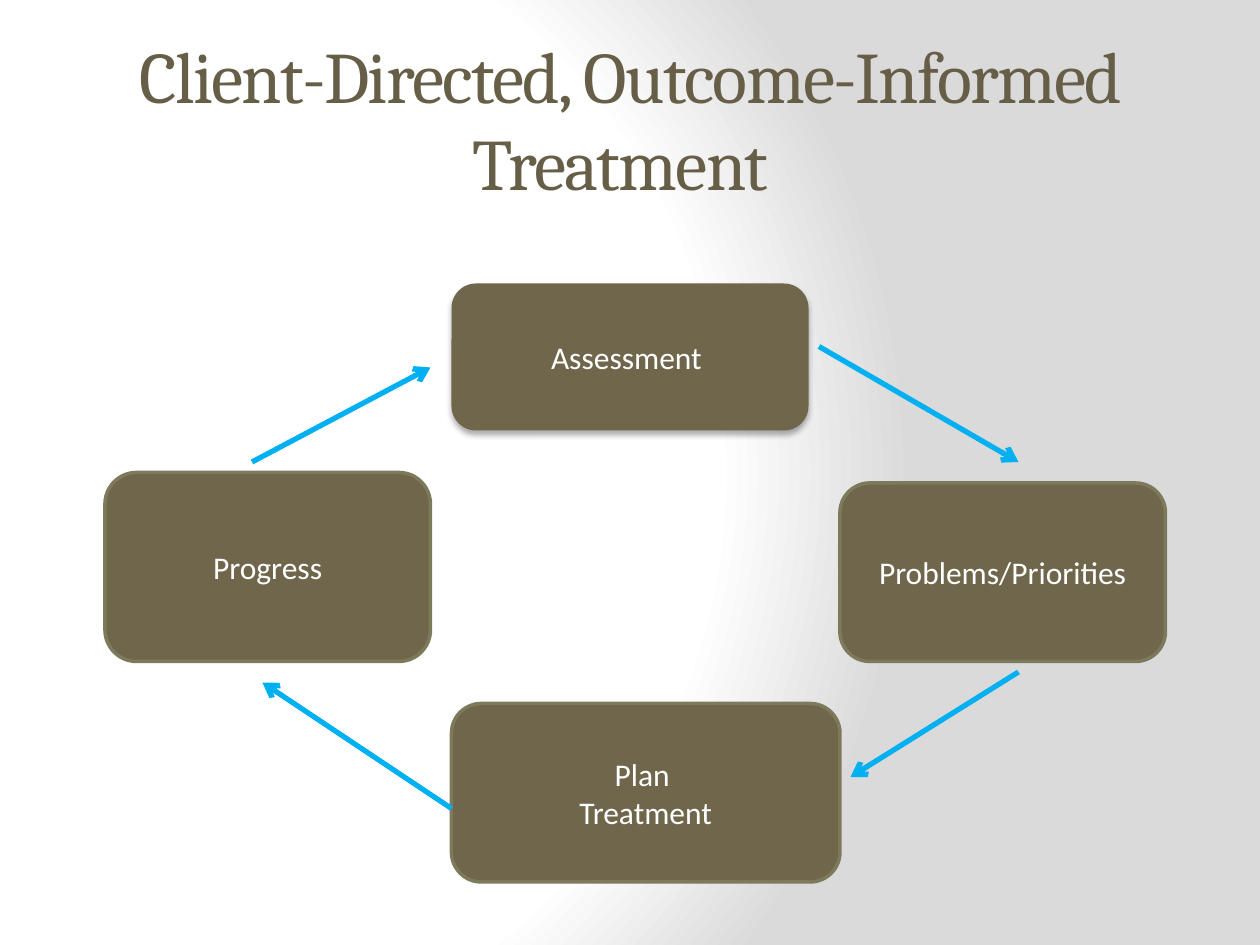
from lxml.etree import SubElement
from pptx import Presentation
from pptx.dml.color import RGBColor
from pptx.enum.shapes import MSO_CONNECTOR, MSO_SHAPE
from pptx.enum.text import MSO_ANCHOR, PP_ALIGN
from pptx.oxml import parse_xml
from pptx.oxml.ns import nsdecls, qn
from pptx.util import Inches, Pt

TITLE = "Client-Directed, Outcome-Informed Treatment\t"
# Grid cells are a twelfth of an inch: left, top, width, height
STEPS = [
    ("Assessment ", (43, 27, 34, 14)),
    ("Problems/Priorities", (80, 46, 31, 17)),
    ("Plan \nTreatment", (43, 67, 37, 17)),
    ("Progress", (10, 45, 31, 18)),
]
# Start and end of each arrow, clockwise
ARROWS = [
    ((78, 33), (97, 44)),
    ((97, 64), (81, 74)),
    ((43, 77), (25, 65)),
    ((24, 44), (41, 35)),
]
INK, BOX, EDGE, ARROW, WHITE = "675E47", "6F664C", "7D7A5C", "00B0F0", "FFFFFF"
BACK = f"""<a:gradFill {nsdecls('a')} rotWithShape="1"><a:gsLst>
<a:gs pos="0"><a:srgbClr val="FFFFFF"/></a:gs>
<a:gs pos="75000"><a:srgbClr val="FFFFFF"/></a:gs>
<a:gs pos="100000"><a:srgbClr val="DADADA"/></a:gs></a:gsLst>
<a:path path="circle"><a:fillToRect l="20000" t="50000" r="100000" b="50000"/></a:path>
</a:gradFill>"""
SHADOW = f"""<a:effectLst {nsdecls('a')}>
<a:outerShdw blurRad="{Pt(3.5)}" dist="{Pt(2.2)}" dir="5400000" rotWithShape="0">
<a:srgbClr val="000000"><a:alpha val="32000"/></a:srgbClr></a:outerShdw></a:effectLst>"""


def color(code):
    return RGBColor.from_string(code)


def cells(*nums):
    return [Inches(n / 12) for n in nums]


def write(shape, text, size, font, code):
    frame = shape.text_frame
    frame.text = text
    frame.word_wrap = True
    frame.vertical_anchor = MSO_ANCHOR.MIDDLE
    for para in frame.paragraphs:
        para.alignment = PP_ALIGN.CENTER
        for run in para.runs:
            run.font.size = Pt(size)
            run.font.name = font
            run.font.color.rgb = color(code)


deck = Presentation()
deck.slide_width, deck.slide_height = Inches(10), Inches(7.5)
slide = deck.slides.add_slide(deck.slide_layouts[6])

# Background
slide.background.fill.gradient()
grad = slide.element.find(".//" + qn("a:gradFill"))
grad.getparent().replace(grad, parse_xml(BACK))

# Title, with tight letter spacing
title = slide.shapes.add_textbox(Inches(0.5), Inches(0.33), Inches(9), Inches(1.22))
write(title, TITLE, 41.4, "Cambria", INK)
for run in title.text_frame.paragraphs[0].runs:
    run.font._element.set("spc", "-100")

# Steps of the cycle; the first has a shadow in place of an edge
for i, (text, area) in enumerate(STEPS):
    box = slide.shapes.add_shape(MSO_SHAPE.ROUNDED_RECTANGLE, *cells(*area))
    box.fill.solid()
    box.fill.fore_color.rgb = color(BOX)
    box.shadow.inherit = False
    if i == 0:
        box.line.fill.background()
        old = box._element.spPr.find(qn("a:effectLst"))
        box._element.spPr.replace(old, parse_xml(SHADOW))
    else:
        box.line.color.rgb = color(EDGE)
        box.line.width = Pt(2)
    write(box, text, 18, "Calibri", WHITE)

# Arrows between the steps
for start, end in ARROWS:
    link = slide.shapes.add_connector(MSO_CONNECTOR.STRAIGHT, *cells(*start, *end))
    link.line.color.rgb = color(ARROW)
    link.line.width = Pt(3)
    SubElement(link.line._get_or_add_ln(), qn("a:tailEnd"), type="arrow")
    SubElement(link._element.spPr, qn("a:effectLst"))

deck.save("out.pptx")
